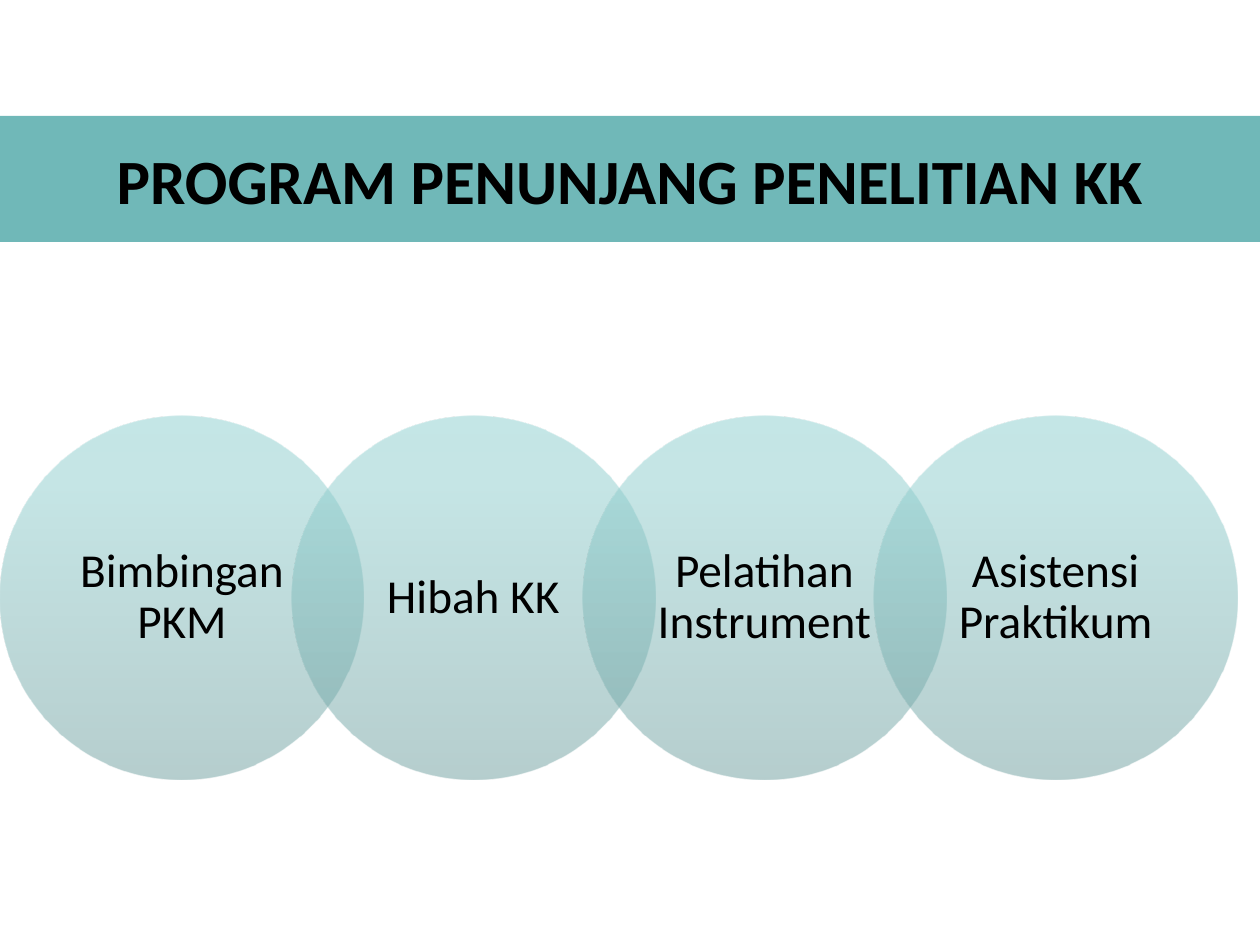
from lxml import etree
from pptx import Presentation
from pptx.dml.color import RGBColor
from pptx.enum.shapes import MSO_SHAPE
from pptx.enum.text import MSO_ANCHOR, PP_ALIGN
from pptx.oxml.ns import qn
from pptx.util import Pt

PX = 914400 / 126
OVAL = MSO_SHAPE.OVAL
MIDDLE = MSO_ANCHOR.MIDDLE
CENTER = PP_ALIGN.CENTER

BLACK = RGBColor(0x00, 0x00, 0x00)
TEAL = RGBColor(0x70, 0xB8, 0xB8)
SHADE = RGBColor(0x6C, 0x9E, 0x9E)
MIST = RGBColor(0x8D, 0xCD, 0xCD)
PALE = RGBColor(0x8C, 0xCF, 0xCF)
STOPS = [(0, SHADE), (80, MIST), (100, PALE)]

TITLE = "PROGRAM PENUNJANG PENELITIAN KK"
ITEMS = ["Bimbingan PKM", "Hibah KK", "Pelatihan Instrument", "Asistensi Praktikum"]


def emu(px):
    return round(px * PX)


def write(shape, text, size, bold=False, spacing=None, pad=None):
    frame = shape.text_frame
    frame.word_wrap = True
    frame.vertical_anchor = MIDDLE
    if pad:
        frame.margin_left = frame.margin_right = emu(pad[0])
        frame.margin_top = frame.margin_bottom = emu(pad[1])
    para = frame.paragraphs[0]
    para.alignment = CENTER
    if spacing:
        para.line_spacing = spacing
    run = para.add_run()
    run.text = text
    font = run.font
    font.name = "Calibri"
    font.size = Pt(size)
    font.bold = bold
    font.color.rgb = BLACK


def blend(shape, stops, alpha, angle):
    """Fill with a see-through gradient; angle is clockwise in degrees."""
    shape.fill.gradient()
    grad = shape._element.spPr.find(qn("a:gradFill"))
    for child in list(grad):
        grad.remove(child)
    row = etree.SubElement(grad, qn("a:gsLst"))
    for pos, color in stops:
        stop = etree.SubElement(row, qn("a:gs"), pos=str(pos * 1000))
        tone = etree.SubElement(stop, qn("a:srgbClr"), val=str(color))
        etree.SubElement(tone, qn("a:alpha"), val=str(alpha * 1000))
    etree.SubElement(grad, qn("a:lin"), ang=str(angle * 60000), scaled="0")


def banner(slide, left, top, width, height):
    title = slide.shapes.title
    title.left, title.top = emu(left), emu(top)
    title.width, title.height = emu(width), emu(height)
    title.fill.solid()
    title.fill.fore_color.rgb = TEAL
    write(title, TITLE, 36, bold=True)


def chain(slide, left, top, size):
    """Place a row of circles, each covering a fifth of the one before."""
    group = slide.shapes.add_group_shape()
    step = size * 4 / 5
    for i, item in enumerate(ITEMS):
        disc = group.shapes.add_shape(
            OVAL, emu(left + i * step), emu(top), emu(size), emu(size))
        disc.shadow.inherit = False
        disc.line.fill.background()
        blend(disc, STOPS, alpha=50, angle=270)
        write(disc, item, 27, spacing=0.9, pad=(20, 5))


def main():
    deck = Presentation()
    deck.slide_width, deck.slide_height = emu(1260), emu(945)
    slide = deck.slides.add_slide(deck.slide_layouts[5])
    banner(slide, 0, 116, 1260, 126)
    chain(slide, 0, 416, 364)
    deck.save("out.pptx")


if __name__ == "__main__":
    main()
